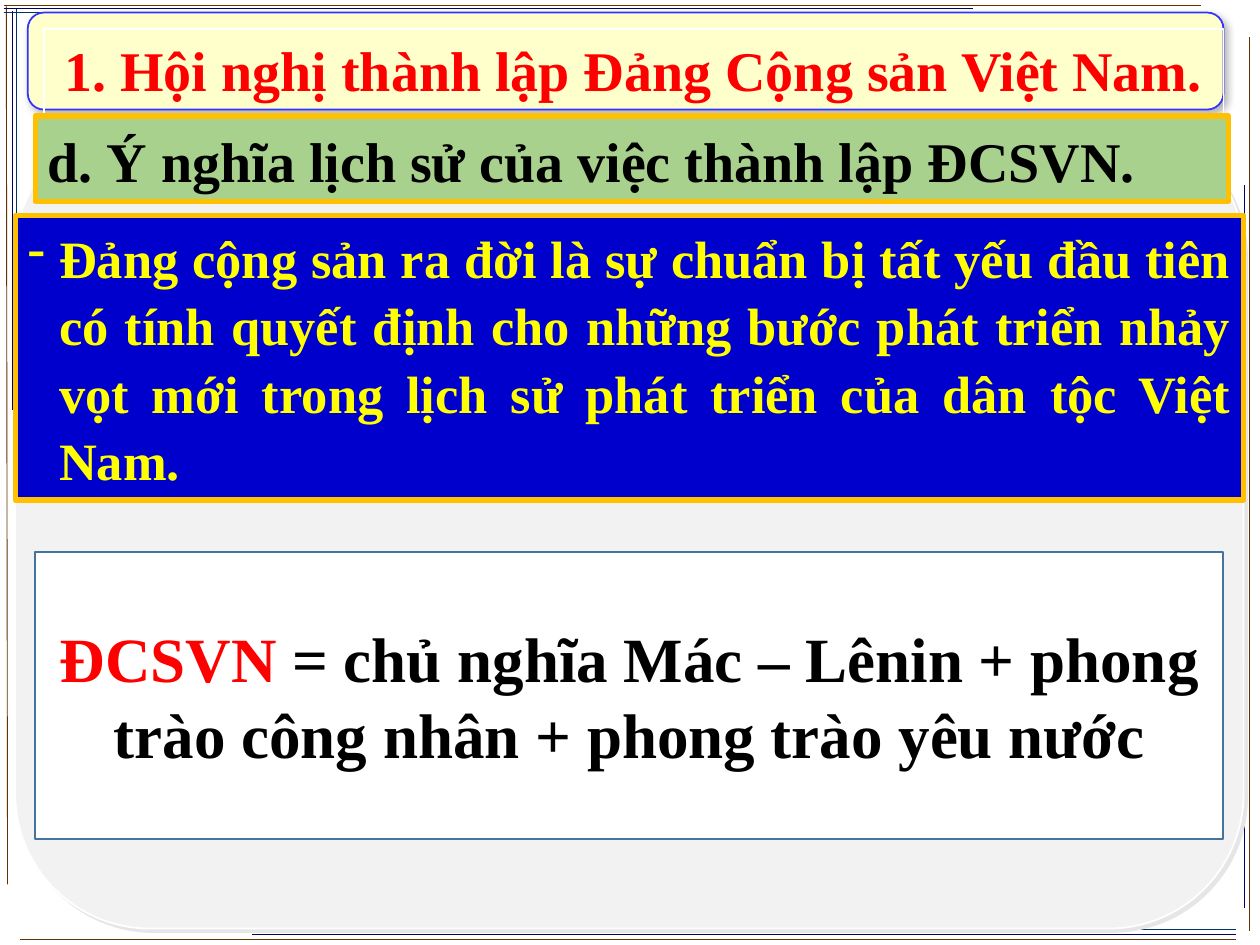
from lxml import etree
from pptx import Presentation
from pptx import util as u
from pptx.dml.color import RGBColor
from pptx.enum import shapes, text
from pptx.oxml import ns

FACE = "Times New Roman"
BROWN, NAVY, TEAL = "663300", "000066", "003366"
RULES = [
    (BROWN, 0.05, 0.04, 0.06, 7.02), (NAVY, 0.1, 0.09, 0.1, 3.25),
    (TEAL, 0.13, 0.07, 0.13, 1.74), (BROWN, 0.03, 0.04, 9.53, 0.04),
    (NAVY, 0.03, 0.07, 7.72, 0.07), (TEAL, 0.03, 0.1, 4.1, 0.1),
    (BROWN, 9.92, 7.39, 9.92, 0.29), (NAVY, 9.88, 7.21, 9.88, 1.47),
    (BROWN, 9.81, 7.46, 0.16, 7.46), (NAVY, 9.81, 7.42, 2, 7.42),
    (TEAL, 9.81, 7.38, 5.68, 7.38),
]


def tint(hue):
    """Turn a hex string into a colour."""
    return RGBColor.from_string(hue)


def add(node, tag, **attrs):
    """Append a drawing element with its attributes."""
    kid = etree.SubElement(node, ns.qn(tag))
    for key, val in attrs.items():
        kid.set(key, str(val))
    return kid


def cast(shape, hue, alpha, blur, dist, angle):
    """Give a shape an outer shadow, with lengths in points."""
    effect = shape._element.spPr.find(ns.qn("a:effectLst"))
    outer = add(effect, "a:outerShdw", blurRad=u.Pt(blur), dist=u.Pt(dist),
                dir=angle * 60000, algn="tl", rotWithShape=0)
    add(add(outer, "a:srgbClr", val=hue), "a:alpha", val=alpha * 1000)


def panel(slide, box, fill, line, width, kind="RECTANGLE"):
    """Place a filled, outlined shape in the box."""
    shape = slide.shapes.add_shape(
        shapes.MSO_SHAPE[kind], *(u.Inches(n) for n in box))
    shape.shadow.inherit = False
    if fill:
        shape.fill.solid()
        shape.fill.fore_color.rgb = tint(fill)
    else:
        shape.fill.background()
    shape.line.color.rgb = tint(line)
    shape.line.width = u.Pt(width)
    return shape


def write(shape, runs, size, align="LEFT", anchor="TOP", space=1.0, dash=False):
    """Write one bold paragraph of coloured runs in a shape."""
    frame = shape.text_frame
    frame.word_wrap = True
    frame.vertical_anchor = text.MSO_ANCHOR[anchor]
    para = frame.paragraphs[0]
    if dash:
        props = para._p.get_or_add_pPr()
        props.set("marL", str(u.Inches(0.25)))
        props.set("indent", str(u.Inches(-0.25)))
        add(props, "a:buFontTx")
        add(props, "a:buChar", char="-")
    para.alignment = text.PP_ALIGN[align]
    para.line_spacing = space
    for words, hue in runs:
        run = para.add_run()
        run.text = words
        look = {"name": FACE, "size": u.Pt(size), "bold": True}
        for key, val in look.items():
            setattr(run.font, key, val)
        run.font.color.rgb = tint(hue)


def border(slide):
    """Draw the thin rules around the slide edge."""
    for hue, *ends in RULES:
        rule = slide.shapes.add_connector(
            shapes.MSO_CONNECTOR.STRAIGHT, *(u.Inches(n) for n in ends))
        rule.line.color.rgb = tint(hue)
        rule.line.width = u.Pt(0.5)
        add(rule._element.spPr, "a:effectLst")


def ground(slide, plate, page):
    """Place the title plate and the grey page behind the text."""
    shape = panel(slide, plate, "FFFFCC", "3333FF", 1, "ROUNDED_RECTANGLE")
    cast(shape, "000000", 30, 4.5, 2.6, 53)
    shape = panel(slide, page, "F2F2F2", "FFFFFF", 1, "ROUNDED_RECTANGLE")
    cast(shape, "E7E6E6", 100, 0, 2.8, 45)


def title(slide, box):
    """Place the lesson title."""
    write(panel(slide, box, None, "FFFFFF", 0.75),
          [("1. Hội nghị thành lập Đảng Cộng sản Việt Nam.", "FF0000")],
          32, "CENTER")


def body(slide, box):
    """Place the main statement."""
    words = ("Đảng cộng sản ra đời là sự chuẩn bị tất yếu đầu tiên có tính "
             "quyết định cho những bước phát triển nhảy vọt mới trong lịch sử "
             "phát triển của dân tộc Việt Nam.")
    write(panel(slide, box, "0000CC", "FFC000", 3), [(words, "FFFF00")],
          30, "JUSTIFY", space=1.07, dash=True)


def head(slide, box):
    """Place the section heading."""
    write(panel(slide, box, "A9D18E", "FFC000", 3),
          [("d. Ý nghĩa lịch sử của việc thành lập ĐCSVN.", "000000")],
          32, space=1.07)


def sum_up(slide, box):
    """Place the closing formula."""
    words = "= chủ nghĩa Mác – Lênin + phong trào công nhân + phong trào yêu nước"
    write(panel(slide, box, "FFFFFF", "43739E", 1),
          [("ĐCSVN ", "FF0000"), (words, "000000")], 36, "CENTER", "MIDDLE")


def main():
    """Build the slide and save it."""
    deck = Presentation()
    deck.slide_width, deck.slide_height = u.Inches(10), u.Inches(7.5)
    slide = deck.slides.add_slide(deck.slide_layouts[6])
    border(slide)
    ground(slide, (0.22, 0.1, 9.49, 0.77), (0.12, 0.94, 9.75, 6.43))
    title(slide, (0.35, 0.23, 9.36, 1.18))
    body(slide, (0.12, 1.71, 9.75, 2.26))
    head(slide, (0.28, 0.92, 9.47, 0.68))
    sum_up(slide, (0.28, 4.38, 9.43, 2.28))
    deck.save("out.pptx")


if __name__ == "__main__":
    main()
